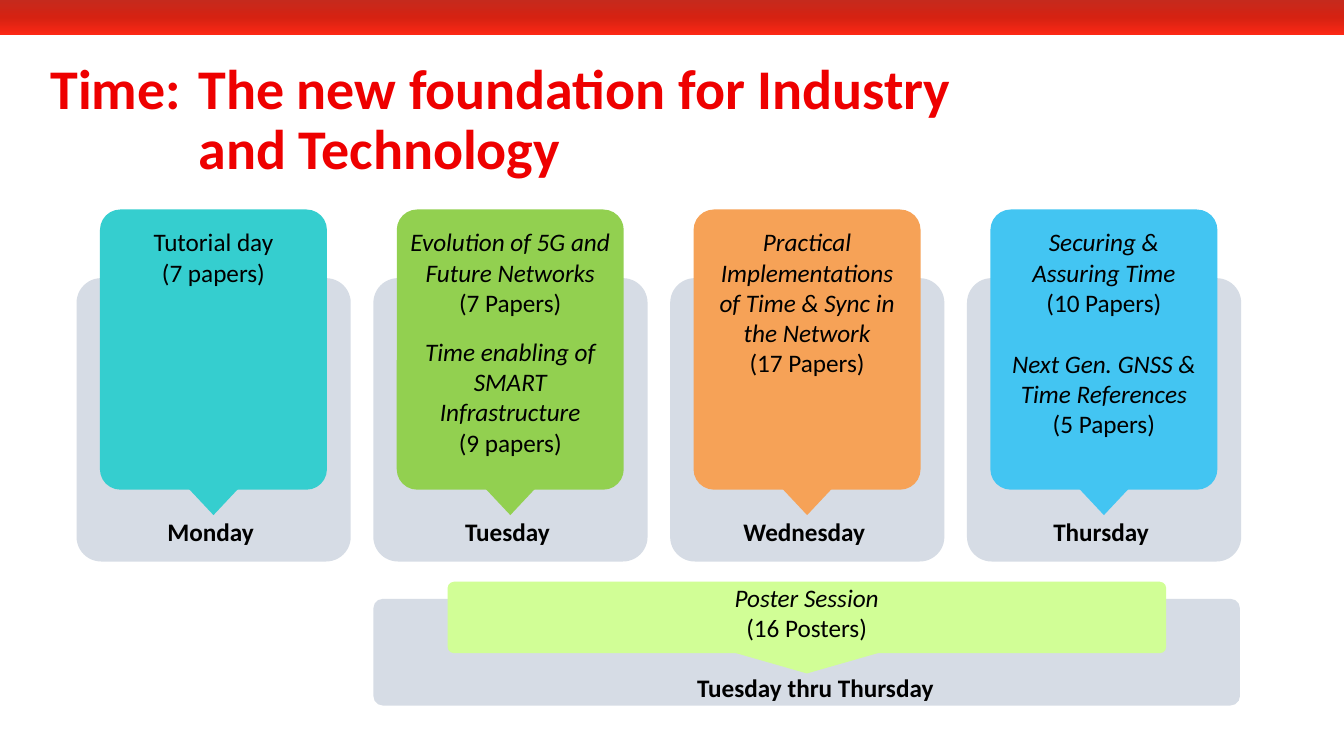
from copy import deepcopy
from dataclasses import dataclass

from pptx import Presentation
from pptx.dml.color import RGBColor as Rgb
from pptx.enum.shapes import MSO_SHAPE as Kind
from pptx.enum.text import MSO_ANCHOR as Anchor, MSO_AUTO_SIZE as Fit, PP_ALIGN as Align
from pptx.oxml.ns import qn
from pptx.shapes.autoshape import Shape
from pptx.shapes.group import GroupShape as Group
from pptx.text.text import TextFrame as Frame
from pptx.util import Cm, Pt


@dataclass(frozen=True)
class Theme:
    font: str = "Calibri"
    head: int = 40
    body: int = 18
    ink: str = "000000"
    red: str = "EE0000"
    base: str = "D6DCE5"
    bar: tuple[str, ...] = ("C52A1D", "D52212", "FD2815")


@dataclass(frozen=True)
class Box:
    """A rectangle in centimetres."""
    x: float
    y: float
    w: float
    h: float

    def place(self) -> tuple[Cm, Cm, Cm, Cm]:
        return Cm(self.x), Cm(self.y), Cm(self.w), Cm(self.h)


@dataclass(frozen=True)
class Talk:
    topic: str
    count: str
    slant: bool = True


@dataclass(frozen=True)
class Day:
    name: str
    color: str
    width: float
    talks: tuple[Talk, ...]
    gap: float = 0


@dataclass(frozen=True)
class Plan:
    """The places of the parts of one panel."""
    base: Box
    card: Box
    tip: Box
    note: Box
    label: Box


THEME = Theme()
STEP = 7.48
DAYS = (
    Day("Monday", "35CECF", 4.52, (Talk("Tutorial day", "(7 papers)", False),)),
    Day("Tuesday", "92D050", 5.72, (
        Talk("Evolution of 5G and Future Networks", "(7 Papers)"),
        Talk("Time enabling of SMART Infrastructure", "(9 papers)")), 13.4),
    Day("Wednesday", "F6A257", 5.49, (
        Talk("Practical Implementations of Time & Sync in the Network", "(17 Papers)"),)),
    Day("Thursday", "43C5F2", 5.49, (
        Talk("Securing & Assuring Time", "(10 Papers)"),
        Talk("Next Gen. GNSS & Time References", "(5 Papers)")), 22),
)
POSTER = Day("Tuesday thru Thursday", "D1FE96", 17.4,
             (Talk("Poster Session", "(16 Posters)"),))
WIDE = Plan(Box(9.41, 15.09, 21.84, 2.69), Box(11.28, 14.66, 18.11, 1.8),
            Box(18.38, 16.41, 3.91, 0.56), Box(11.63, 14.55, 17.4, 1.8),
            Box(13.35, 16.81, 14.4, 1.02))


def write(frame: Frame, lines: list[tuple[str, bool]], *, first: bool = True,
          size: int = THEME.body, color: str = THEME.ink, bold: bool = False,
          align: Align = Align.CENTER, gap: float = 0, pitch: float = 1.0) -> None:
    """Write one paragraph of (text, italic) lines parted by line breaks."""
    para = frame.paragraphs[0] if first else frame.add_paragraph()
    para.alignment, para.line_spacing = align, pitch
    para.space_before = Pt(0 if first else gap)
    for row, (text, slant) in enumerate(lines):
        if row:
            para.add_line_break()
        run = para.add_run()
        run.text = text
        font = run.font
        font.name, font.size = THEME.font, Pt(size)
        font.bold, font.italic = bold, slant
        font.color.rgb = Rgb.from_string(color)


def draw(group: Group, kind: Kind, box: Box, color: str) -> Shape:
    shape = group.shapes.add_shape(kind, *box.place())
    shape.shadow.inherit = False
    shape.fill.solid()
    shape.fill.fore_color.rgb = Rgb.from_string(color)
    shape.line.fill.background()
    return shape


def frame_at(group: Group, box: Box) -> Frame:
    frame = group.shapes.add_textbox(*box.place()).text_frame
    frame.word_wrap = True
    return frame


def panel(group: Group, day: Day, plan: Plan) -> None:
    for box, color in ((plan.base, THEME.base), (plan.card, day.color)):
        draw(group, Kind.ROUNDED_RECTANGLE, box, color).adjustments[0] = 0.09
    draw(group, Kind.ISOSCELES_TRIANGLE, plan.tip, day.color).rotation = 180
    write(frame_at(group, plan.label), [(day.name, False)], bold=True)
    note = frame_at(group, plan.note)
    for row, talk in enumerate(day.talks):
        write(note, [(talk.topic, talk.slant), (talk.count, False)],
              first=row == 0, gap=day.gap)


def day_plan(col: int, width: float) -> Plan:
    left = 1.93 + col * STEP
    card = Box(left + 0.59, 5.28, 5.72, 7.06)
    mid = card.x + card.w / 2
    return Plan(Box(left, 7.01, 6.91, 7.14), card,
                Box(mid - 0.62, 12.32, 1.24, 0.66),
                Box(mid - width / 2, 5.59, width, 6.15),
                Box(card.x - 0.07, 12.88, card.w, 1.02))


def banner(shape: Shape) -> None:
    """Fill the top bar with a three-stop gradient running down."""
    shape.fill.gradient()
    shape.fill.gradient_angle = 270
    stops = shape.element.spPr.find(qn("a:gradFill")).find(qn("a:gsLst"))
    stops.insert(1, deepcopy(stops[0]))
    for row, stop in enumerate(shape.fill.gradient_stops):
        stop.position = row / 2
        stop.color.rgb = Rgb.from_string(THEME.bar[row])


def heading(title: Shape) -> None:
    title.left, title.top, title.width, title.height = Box(1.27, 1.52, 29.74, 3.07).place()
    frame = title.text_frame
    frame.margin_left = frame.margin_right = frame.margin_top = frame.margin_bottom = 0
    frame.vertical_anchor, frame.auto_size = Anchor.MIDDLE, Fit.NONE
    frame.word_wrap = True
    props = frame.paragraphs[0]._p.get_or_add_pPr()
    props.set("marL", str(Cm(3.73)))
    props.set("indent", str(Cm(-3.73)))
    write(frame, [("Time:\tThe new foundation for Industry", False),
                  ("and Technology", False)],
          size=THEME.head, color=THEME.red, bold=True, align=Align.LEFT, pitch=0.9)


def main() -> None:
    deck = Presentation()
    deck.slide_width, deck.slide_height = Cm(33.87), Cm(19.05)
    slide = deck.slides.add_slide(deck.slide_layouts[5])
    banner(draw(slide, Kind.RECTANGLE, Box(0, 0, 33.87, 0.89), THEME.bar[0]))
    heading(slide.shapes.title)
    for col, day in enumerate(DAYS):
        panel(slide.shapes.add_group_shape(), day, day_plan(col, day.width))
    panel(slide.shapes.add_group_shape(), POSTER, WIDE)
    deck.save("out.pptx")


if __name__ == "__main__":
    main()
